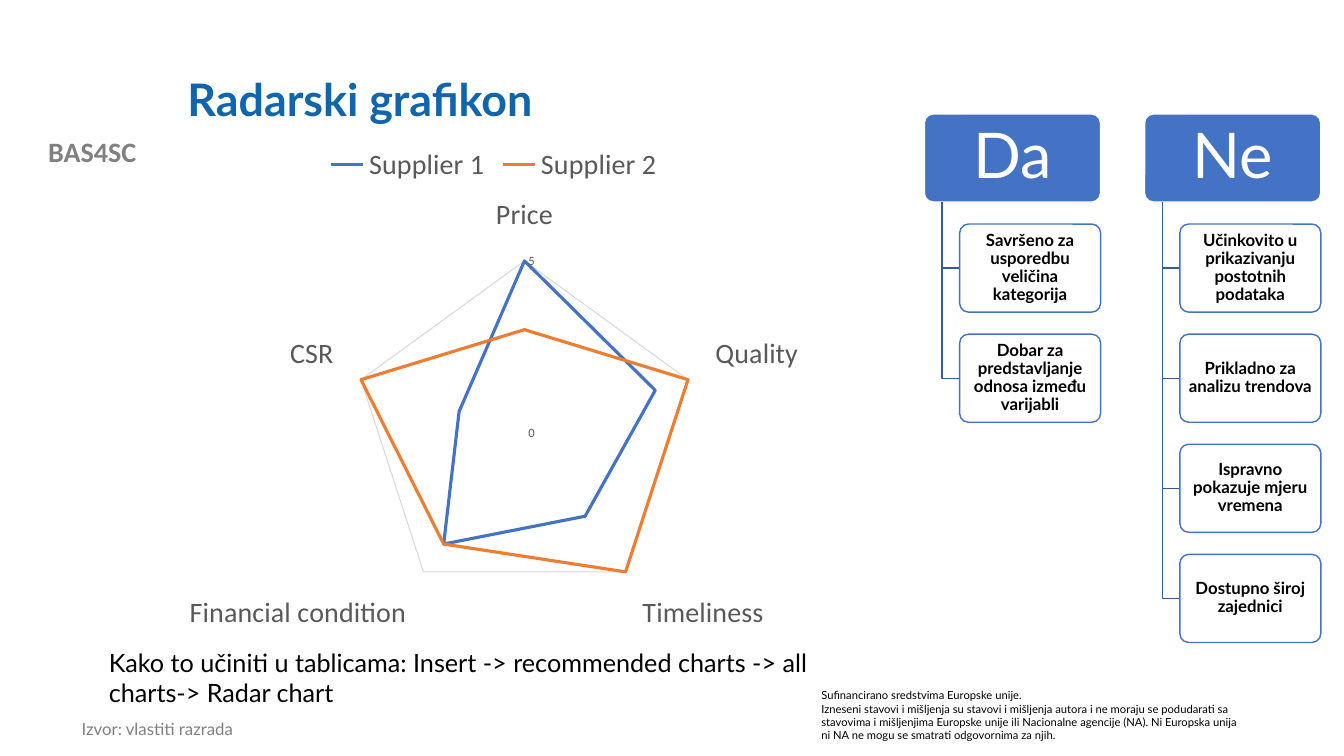
from lxml import etree
from pptx import Presentation
from pptx.chart.data import CategoryChartData
from pptx.dml.color import RGBColor
from pptx.enum.chart import XL_CHART_TYPE, XL_LEGEND_POSITION, XL_TICK_MARK
from pptx.enum.shapes import MSO_SHAPE
from pptx.enum.text import MSO_ANCHOR, MSO_AUTO_SIZE, PP_ALIGN
from pptx.oxml.ns import qn
from pptx.util import Pt

RADAR = XL_CHART_TYPE.RADAR
LEGEND_TOP = XL_LEGEND_POSITION.TOP
NO_TICK = XL_TICK_MARK.NONE
ROUNDED = MSO_SHAPE.ROUNDED_RECTANGLE
TOP, MIDDLE = MSO_ANCHOR.TOP, MSO_ANCHOR.MIDDLE
FIXED, GROW = MSO_AUTO_SIZE.NONE, MSO_AUTO_SIZE.SHAPE_TO_FIT_TEXT
LEFT, CENTER = PP_ALIGN.LEFT, PP_ALIGN.CENTER

BLUE, ORANGE, TREE_LINE = "4472C4", "ED7D31", "365B9D"
WHITE, BLACK, GRID, LABEL = "FFFFFF", "000000", "D9D9D9", "595959"


def color(value):
    return RGBColor.from_string(value)


def write(box, lines, font, ink, align=LEFT, spacing=1.0, **frame_format):
    """Fill a shape with paragraphs; font and frame_format hold attribute values."""
    frame = box.text_frame
    for name, value in {"word_wrap": True, **frame_format}.items():
        setattr(frame, name, value)
    for index, line in enumerate(lines):
        para = frame.add_paragraph() if index else frame.paragraphs[0]
        para.alignment, para.line_spacing = align, spacing
        para.space_before = Pt(0)
        span = para.add_run()
        span.text = line
        for name, value in font.items():
            setattr(span.font, name, value)
        span.font.color.rgb = color(ink)


deck = Presentation()
deck.slide_width, deck.slide_height = Pt(960), Pt(540)
page = deck.slides.add_slide(deck.slide_layouts[1])

# Title and source line
title, source = page.shapes.title, page.placeholders[1]
for holder, place in ((title, (126.7, 28.8, 767.5, 87.8)), (source, (51.1, 511.2, 360.7, 23))):
    holder.left, holder.top, holder.width, holder.height = map(Pt, place)
write(title, ["Radarski grafikon"], {"name": "Lato", "size": Pt(32), "bold": True}, "1065AB",
      spacing=0.9, vertical_anchor=MIDDLE, auto_size=FIXED)
source_format = source.text_frame.paragraphs[0]._p.get_or_add_pPr()
source_format.set("marL", "0")
source_format.set("indent", "0")
etree.SubElement(source_format, qn("a:buNone"))
write(source, ["Izvor: vlastiti razrada"], {"name": "Lato", "size": Pt(12)}, "7F7F7F",
      spacing=0.9, vertical_anchor=TOP, auto_size=FIXED)

# Project name, funding note and instructions
notes = [
    ((0, 92.2, 131.8, 31.7), ["BAS4SC"],
     {"name": "Calibri", "size": Pt(20), "bold": True}, "808080", CENTER),
    ((579.6, 488.2, 314.6, 46.1),
     ["Sufinancirano sredstvima Europske unije.",
      "Izneseni stavovi i mišljenja su stavovi i mišljenja autora i ne moraju se podudarati sa "
      "stavovima i mišljenjima Europske unije ili Nacionalne agencije (NA). Ni Europska unija "
      "ni NA ne mogu se smatrati odgovornima za njih."],
     {"name": "Lato", "size": Pt(8)}, BLACK, LEFT),
    ((70.6, 458.6, 567.4, 51.1),
     ["Kako to učiniti u tablicama: Insert -> recommended charts -> all charts-> Radar chart"],
     {"name": "Lato", "size": Pt(18)}, BLACK, LEFT),
]
for place, lines, font, ink, align in notes:
    box = page.shapes.add_textbox(*map(Pt, place))
    write(box, lines, font, ink, align, auto_size=GROW)

# Yes and no columns
COLUMNS = {
    "Da": ["Savršeno za usporedbu veličina kategorija",
           "Dobar za predstavljanje odnosa između varijabli"],
    "Ne": ["Učinkovito u prikazivanju postotnih podataka",
           "Prikladno za analizu trendova",
           "Ispravno pokazuje mjeru vremena",
           "Dostupno široj zajednici"],
}
COLUMN_LEFT, COLUMN_STEP = 660.3, 157.3
HEAD_TOP, ROW_STEP, BOX_HEIGHT = 81.4, 78.65, 62.9
HEAD_WIDTH, CARD_WIDTH = 125.8, 100.7
TRUNK_INDENT, CARD_INDENT = 12.6, 25.2

for column, (heading, reasons) in enumerate(COLUMNS.items()):
    left = COLUMN_LEFT + column * COLUMN_STEP
    for row, text in enumerate([heading, *reasons]):
        is_head = row == 0
        top = HEAD_TOP + row * ROW_STEP
        card_left = left if is_head else left + CARD_INDENT
        if not is_head:
            trunk, middle = left + TRUNK_INDENT, top + BOX_HEIGHT / 2
            builder = page.shapes.build_freeform(Pt(trunk), Pt(HEAD_TOP + BOX_HEIGHT))
            builder.add_line_segments(
                [(Pt(trunk), Pt(middle)), (Pt(card_left), Pt(middle))], close=False)
            branch = builder.convert_to_shape()
            branch.shadow.inherit = False
            branch.fill.background()
            branch.line.color.rgb = color(TREE_LINE)
            branch.line.width = Pt(1)
        card = page.shapes.add_shape(ROUNDED, Pt(card_left), Pt(top),
                                     Pt(HEAD_WIDTH if is_head else CARD_WIDTH), Pt(BOX_HEIGHT))
        card.adjustments[0] = 0.1
        card.shadow.inherit = False
        card.fill.solid()
        card.fill.fore_color.rgb = color(BLUE if is_head else WHITE)
        card.line.color.rgb = color(WHITE if is_head else BLUE)
        card.line.width = Pt(1)
        if not is_head:
            fill_color = card._element.spPr.find(qn("a:solidFill"))[0]
            etree.SubElement(fill_color, qn("a:alpha"), val="90000")
        side, edge = (Pt(6.75), Pt(4.5)) if is_head else (Pt(1.8), Pt(1.2))
        write(card, [text],
              {"name": "Lato", "size": Pt(45 if is_head else 12), "bold": not is_head},
              WHITE if is_head else BLACK, CENTER, 0.9, vertical_anchor=MIDDLE,
              margin_left=side, margin_right=side, margin_top=edge, margin_bottom=edge)

# Radar chart of suppliers
data = CategoryChartData()
data.categories = ["Price", "Quality", "Timeliness", "Financial condition", "CSR"]
data.add_series("Supplier 1", (5, 4, 3, 4, 2))
data.add_series("Supplier 2", (3, 5, 5, 4, 5))
chart = page.shapes.add_chart(RADAR, Pt(51.1), Pt(95.8), Pt(603.4), Pt(361.4), data).chart
chart.has_title = False
chart.has_legend = True
legend = chart.legend
legend.position, legend.include_in_layout = LEGEND_TOP, False

categories, values = chart.category_axis, chart.value_axis
categories.has_major_gridlines = False
values.has_major_gridlines = True
values.minimum_scale, values.maximum_scale, values.major_unit = 0, 5, 5
values.format.line.fill.background()
for axis in (categories, values):
    axis.major_tick_mark = axis.minor_tick_mark = NO_TICK
for line in (categories.format.line, values.major_gridlines.format.line):
    line.color.rgb, line.width = color(GRID), Pt(0.75)
for font, size, ink in ((chart.font, 10, BLACK), (legend.font, 20, LABEL),
                        (categories.tick_labels.font, 20, LABEL),
                        (values.tick_labels.font, 9, LABEL)):
    font.name, font.size, font.color.rgb = "Calibri", Pt(size), color(ink)
for supplier, ink in zip(chart.plots[0].series, (BLUE, ORANGE)):
    supplier.smooth = False
    supplier.format.line.color.rgb = color(ink)
    supplier.format.line.width = Pt(2.25)

deck.save("out.pptx")
